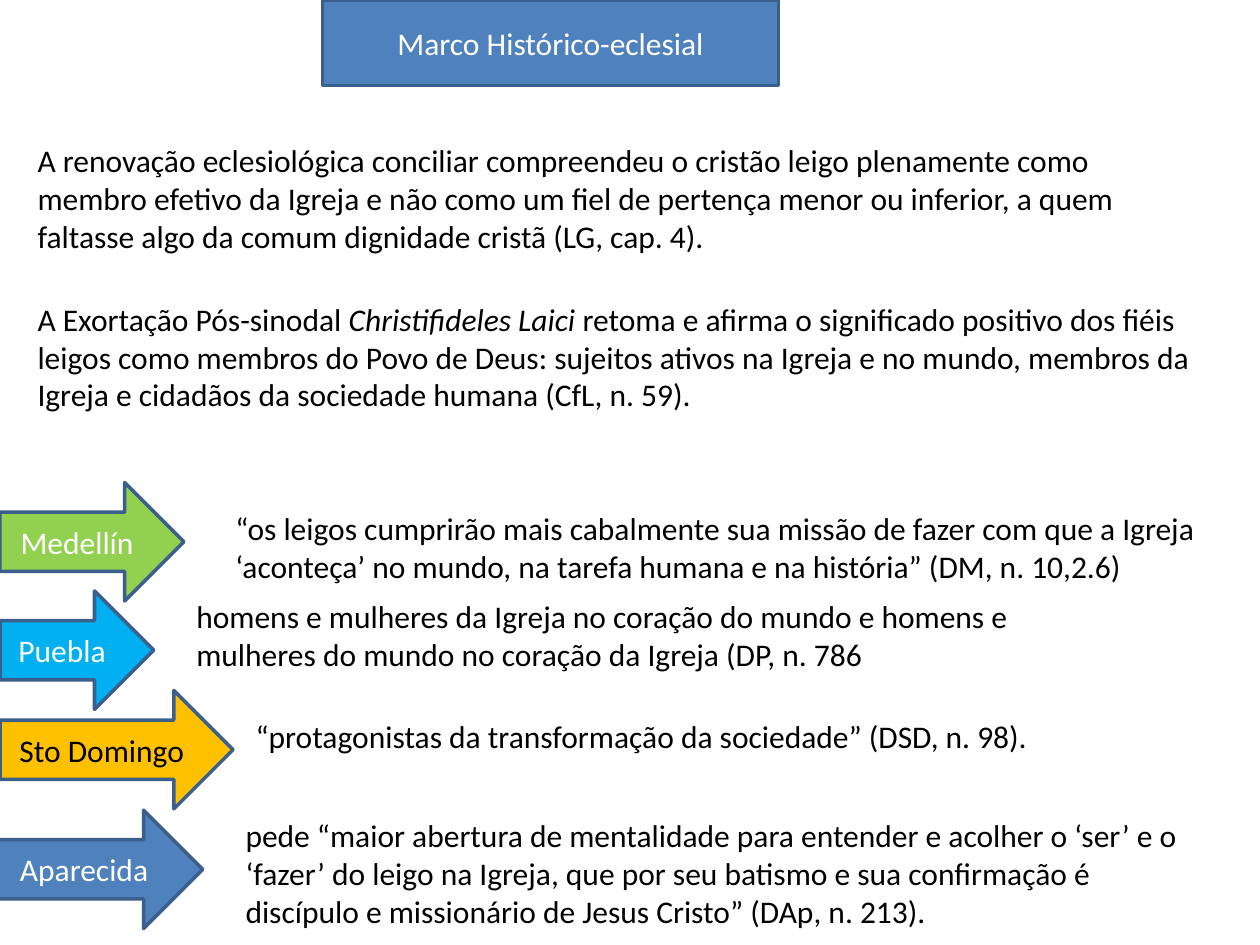
from pptx import Presentation
from pptx.dml.color import RGBColor
from pptx.enum.shapes import MSO_SHAPE
from pptx.enum.text import MSO_ANCHOR, MSO_AUTO_SIZE, PP_ALIGN
from pptx.util import Inches, Pt

RECTANGLE, ARROW = MSO_SHAPE.RECTANGLE, MSO_SHAPE.RIGHT_ARROW
MIDDLE, CENTER = MSO_ANCHOR.MIDDLE, PP_ALIGN.CENTER
FIT_TEXT = MSO_AUTO_SIZE.SHAPE_TO_FIT_TEXT

COLORS = {
    "blue": "4F81BD", "outline": "3A5F8C", "green": "92D050",
    "sky": "00B0F0", "amber": "FFC000", "white": "FFFFFF", "black": "000000",
}
WIDTH, HEIGHT = Inches(10), Inches(7.5)
COLUMNS, ROWS = 100, 75
ARROW_ROWS = 9.4

INTRODUCTION = [
    (10.7, 10.1, [
        ("A renovação eclesiológica conciliar compreendeu o cristão leigo plenamente "
         "como membro efetivo da Igreja e não como um fiel de pertença menor ou "
         "inferior, a quem faltasse algo da comum dignidade cristã (LG, cap. 4).", False),
    ]),
    (23.3, 13.1, [
        ("A Exortação Pós-sinodal ", False),
        ("Christifideles Laici ", True),
        ("retoma e afirma o significado positivo dos fiéis leigos como membros do Povo "
         "de Deus: sujeitos ativos na Igreja e no mundo, membros da Igreja e cidadãos "
         "da sociedade humana (CfL, n. 59).", False),
    ]),
]

CONFERENCES = [
    ("Medellín", "green", "white", (0, 38.3, 14.6), (17.7, 39.9, 79.5, 7.1),
     "“os leigos cumprirão mais cabalmente sua missão de fazer com que a Igreja "
     "‘aconteça’ no mundo, na tarefa humana e na história” (DM, n. 10,2.6)"),
    ("Puebla", "sky", "white", (0, 46.9, 12.2), (14.6, 46.9, 74.8, 7.1),
     "homens e mulheres da Igreja no coração do mundo e homens e mulheres do mundo "
     "no coração da Igreja (DP, n. 786"),
    ("Sto Domingo", "amber", "black", (0, 54.8, 18.5), (19.3, 56.4, 70.1, 4),
     "“protagonistas da transformação da sociedade” (DSD, n. 98)."),
    ("Aparecida", "blue", "white", (-0.4, 64.3, 16.5), (18.5, 64.3, 77.2, 10.1),
     "pede “maior abertura de mentalidade para entender e acolher o ‘ser’ e o "
     "‘fazer’ do leigo na Igreja, que por seu batismo e sua confirmação é discípulo "
     "e missionário de Jesus Cristo” (DAp, n. 213)."),
]


def color(name):
    """Return the named colour."""
    return RGBColor.from_string(COLORS[name])


def place(column, row, columns, rows):
    """Turn grid units into left, top, width and height."""
    across, down = WIDTH / COLUMNS, HEIGHT / ROWS
    return [round(length) for length in
            (column * across, row * down, columns * across, rows * down)]


def write(frame, spans, font_color):
    """Write one paragraph of (text, italic) spans."""
    frame.word_wrap = True
    para = frame.paragraphs[0]
    para.font.name, para.font.size = "Calibri", Pt(18)
    para.font.color.rgb = color(font_color)
    for text, italic in spans:
        span = para.add_run()
        span.text = text
        if italic:
            span.font.italic = True
    return para


def add_label(page, kind, cells, text, fill, font_color):
    """Add an outlined shape with a centred label."""
    shape = page.shapes.add_shape(kind, *place(*cells))
    shape.shadow.inherit = False
    shape.fill.solid()
    shape.fill.fore_color.rgb = color(fill)
    shape.line.color.rgb = color("outline")
    shape.line.width = Pt(2)
    shape.text_frame.vertical_anchor = MIDDLE
    write(shape.text_frame, [(text, False)], font_color).alignment = CENTER


def add_passage(page, cells, spans):
    """Add a wrapped block of black text."""
    box = page.shapes.add_textbox(*place(*cells))
    box.text_frame.auto_size = FIT_TEXT
    write(box.text_frame, spans, "black")


def main():
    """Build and save the slide."""
    deck = Presentation()
    deck.slide_width, deck.slide_height = WIDTH, HEIGHT
    page = deck.slides.add_slide(deck.slide_layouts[6])
    add_label(page, RECTANGLE, (25.6, 0, 36.2, 6.8),
              "Marco Histórico-eclesial", "blue", "white")
    for row, rows, spans in INTRODUCTION:
        add_passage(page, (2, row, 93.7, rows), spans)
    for name, fill, font_color, arrow, cells, quote in CONFERENCES:
        add_passage(page, cells, [(quote, False)])
        add_label(page, ARROW, (*arrow, ARROW_ROWS), name, fill, font_color)
    deck.save("out.pptx")


if __name__ == "__main__":
    main()
